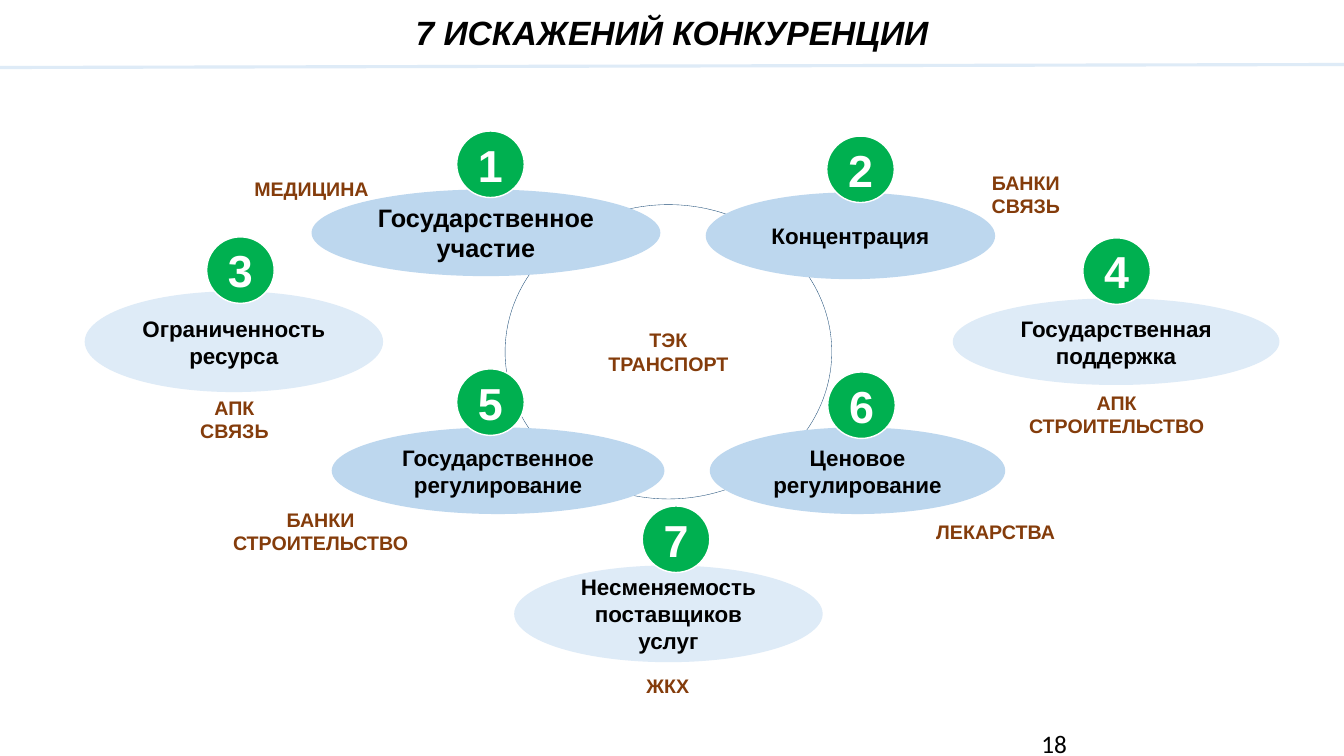
from pptx import Presentation
from pptx.dml.color import RGBColor
from pptx.enum import shapes, text
from pptx.oxml import parse_xml
from pptx.oxml.ns import nsdecls
from pptx.util import Inches, Pt

# Content
TITLE = "7 ИСКАЖЕНИЙ КОНКУРЕНЦИИ"
PAGE = "18"
COLORS = {"ink": "000000", "white": "FFFFFF", "pale": "DEEBF7", "blue": "BDD7EE",
          "green": "00B050", "brown": "843C0B", "navy": "1F4E79"}

# Industry labels: lines, box (left, top, width, height)
LABELS = [
    ("ЛЕКАРСТВА", (9.17, 4.98, 1.41, 0.58)),
    ("ЖКХ", (6.16, 6.57, 0.93, 0.47)),
    ("АПК\nСВЯЗЬ", (1.63, 3.83, 1.39, 0.66)),
    ("БАНКИ\nСТРОИТЕЛЬСТВО", (2.07, 4.98, 2.22, 0.58)),
    ("МЕДИЦИНА", (2.17, 1.4, 1.84, 0.94)),
    ("АПК\nСТРОИТЕЛЬСТВО", (10.1, 3.82, 1.95, 0.58)),
    ("БАНКИ\nСВЯЗЬ", (9.29, 1.48, 1.77, 0.89)),
]
RING = ("ТЭК\nТРАНСПОРТ", (5.01, 2.03, 3.24, 2.92))

# Distortions in order: name, fill, text size, oval box, badge corner
TOPICS = [
    ("Государственное участие", "blue", 18, (3.09, 1.88, 3.46, 0.86), (4.53, 1.3)),
    ("Концентрация", "blue", 16, (7, 1.91, 2.87, 0.86), (8.2, 1.35)),
    ("Ограниченность ресурса", "pale", 16, (0.84, 2.89, 2.96, 1), (2.05, 2.35)),
    ("Государственная поддержка", "pale", 16, (9.45, 2.96, 3.24, 0.86), (10.74, 2.36)),
    ("Государственное регулирование", "blue", 16, (3.29, 4.24, 3.3, 0.86), (4.53, 3.66)),
    ("Ценовое регулирование", "blue", 16, (7.04, 4.24, 2.93, 0.86), (8.21, 3.69)),
    ("Несменяемость поставщиков услуг", "pale", 16, (5.1, 5.61, 3.06, 0.96), (6.37, 5.02)),
]
BADGE = (0.67, 0.66)

# Text formats
FONTS = {
    "title": {"name": "Arial", "size": Pt(24), "bold": True, "italic": True},
    "label": {"name": "Arial", "size": Pt(14), "bold": True},
    "topic": {"name": "Arial", "size": Pt(16), "bold": True},
    "badge": {"name": "Arial", "size": Pt(32), "bold": True},
    "page": {"name": "Calibri", "size": Pt(18), "bold": False},
}
RECT = shapes.MSO_SHAPE.RECTANGLE
OVAL = shapes.MSO_SHAPE.OVAL
MID = text.PP_ALIGN.CENTER


def color(name):
    return RGBColor.from_string(COLORS[name])


def write(shape, words, style, ink, align=MID, size=None):
    frame = shape.text_frame
    frame.word_wrap = True
    frame.vertical_anchor = text.MSO_ANCHOR.MIDDLE
    frame.text = words
    for para in frame.paragraphs:
        para.alignment = align
        for run in para.runs:
            for key, value in FONTS[style].items():
                setattr(run.font, key, value)
            if size:
                run.font.size = Pt(size)
            run.font.color.rgb = color(ink)


def draw(slide, kind, box, fill, line=None, width=0.25):
    shape = slide.shapes.add_shape(kind, *map(Inches, box))
    shape.shadow.inherit = False
    shape.fill.solid()
    shape.fill.fore_color.rgb = color(fill)
    if line:
        shape.line.color.rgb = color(line)
        shape.line.width = Pt(width)
    else:
        shape.line.fill.background()
    return shape


def main():
    deck = Presentation()
    deck.slide_width, deck.slide_height = Inches(13.33), Inches(7.5)
    slide = deck.slides.add_slide(deck.slide_layouts[5])

    # Title and rule
    title = slide.shapes.title
    title.left, title.top, title.width, title.height = map(Inches, (0, 0.04, 13.33, 0.6))
    write(title, TITLE, "title", "ink")
    title.text_frame.paragraphs[0].line_spacing = 0.9
    rule = slide.shapes.add_connector(
        shapes.MSO_CONNECTOR.STRAIGHT, *map(Inches, (0, 0.67, 13.33, 0.64)))
    rule.line.color.rgb = color("pale")
    rule.line.width = Pt(2.25)
    rule._element.spPr.append(parse_xml(f"<a:effectLst {nsdecls('a')}/>"))

    # Industry labels and central ring
    for words, box in LABELS:
        write(draw(slide, RECT, box, "white", "white"), words, "label", "brown")
    words, box = RING
    write(draw(slide, OVAL, box, "white", "navy"), words, "label", "brown")

    # Ovals, then numbered badges above them
    for name, fill, size, box, corner in TOPICS:
        write(draw(slide, OVAL, box, fill), name, "topic", "ink", size=size)
    for number, topic in enumerate(TOPICS, 1):
        badge = draw(slide, OVAL, topic[-1] + BADGE, "green", "white", 1)
        write(badge, str(number), "badge", "white")

    # Page number
    page = slide.shapes.add_textbox(*map(Inches, (10.23, 7.18, 3, 0.4)))
    write(page, PAGE, "page", "ink", text.PP_ALIGN.LEFT)

    deck.save("out.pptx")


if __name__ == "__main__":
    main()
